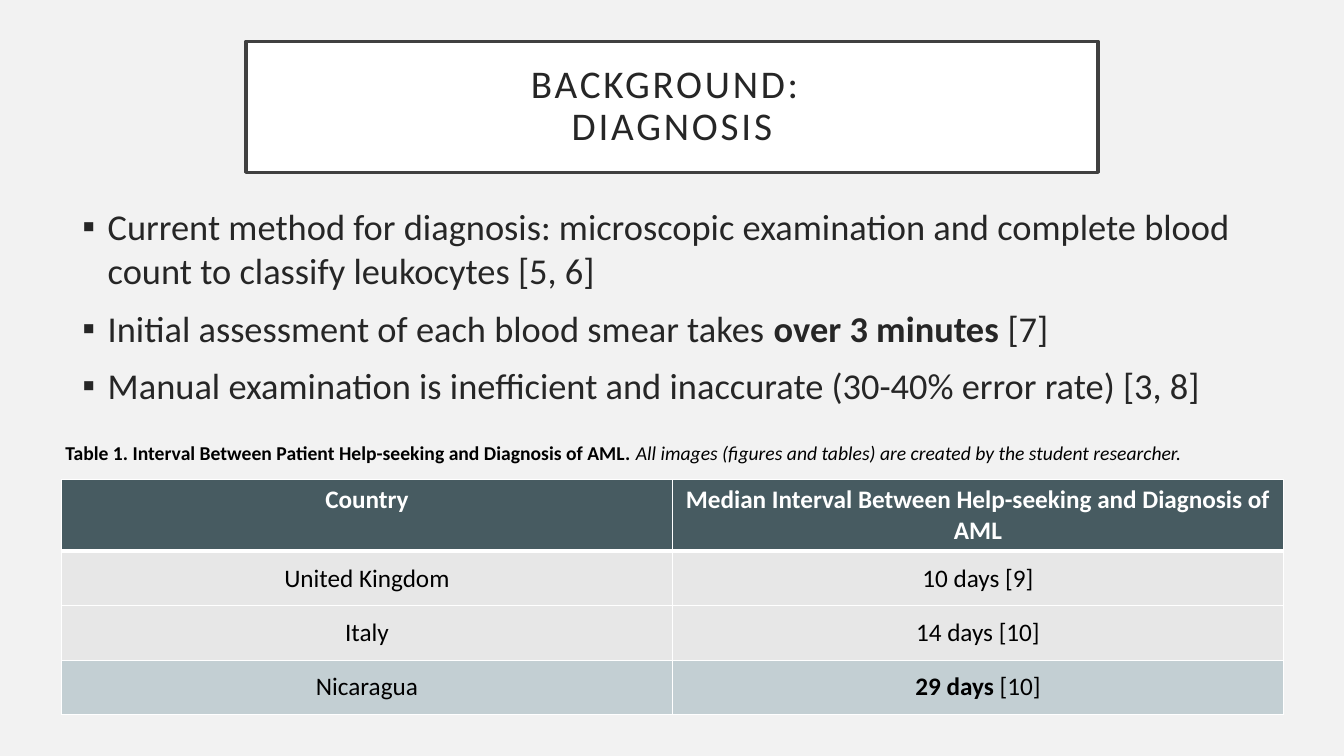
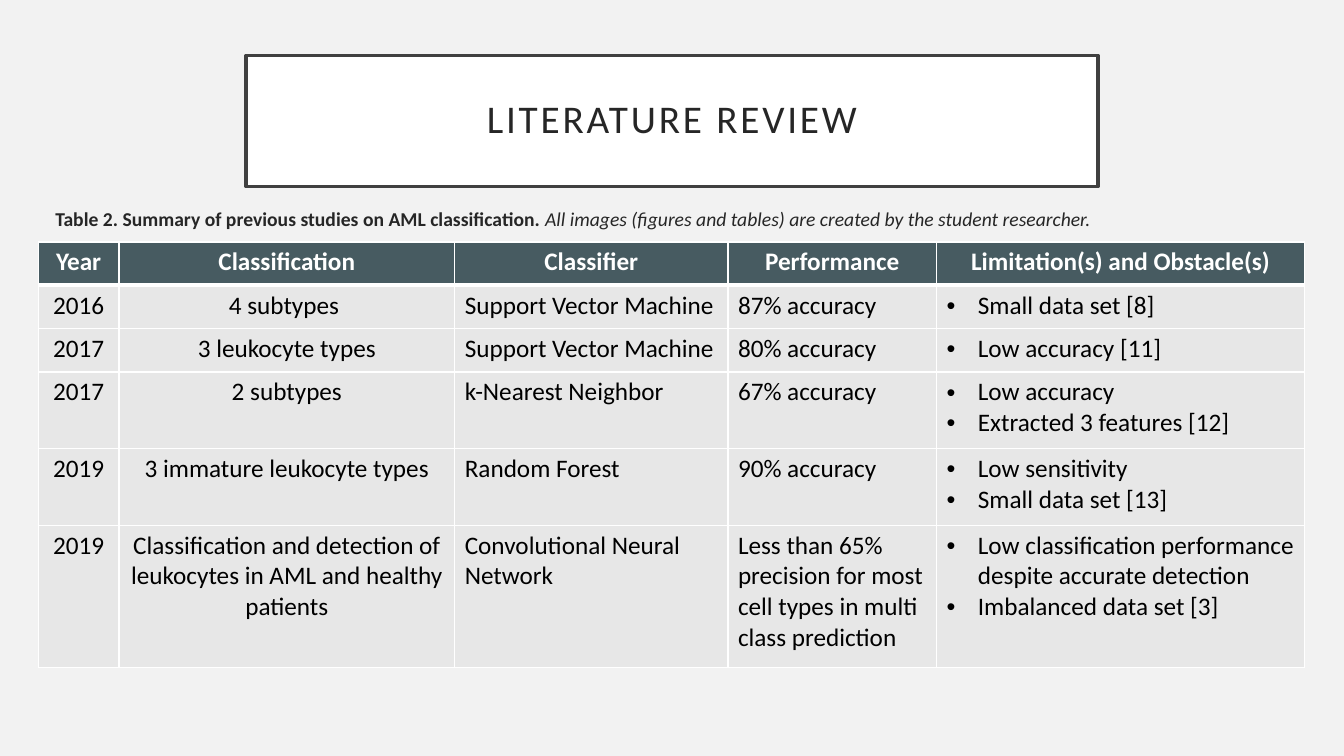
from dataclasses import dataclass

from lxml import etree
from pptx import Presentation
from pptx.dml.color import RGBColor
from pptx.enum.text import MSO_ANCHOR, MSO_AUTO_SIZE, PP_ALIGN
from pptx.oxml.ns import qn
from pptx.util import Inches, Pt

LEFT, CENTER = PP_ALIGN.LEFT, PP_ALIGN.CENTER
TOP, MIDDLE = MSO_ANCHOR.TOP, MSO_ANCHOR.MIDDLE
NO_AUTOFIT = MSO_AUTO_SIZE.NONE
TITLE_ONLY = 5


@dataclass(frozen=True)
class Theme:
    font: str = "Calibri"
    background: str = "F2F2F2"
    white: str = "FFFFFF"
    black: str = "000000"
    ink: str = "262626"
    frame: str = "404040"
    header: str = "475B61"
    row: str = "E7E7E7"
    highlight: str = "C3CFD3"
    title_size: int = 28
    body_size: int = 26
    table_size: int = 18
    caption_size: int = 14


@dataclass(frozen=True)
class Run:
    text: str
    bold: bool = False
    italic: bool = False


@dataclass(frozen=True)
class Column:
    width: float
    align: PP_ALIGN = CENTER
    bullet: str = ""


@dataclass(frozen=True)
class Box:
    left: float
    top: float
    width: float
    height: float

    def emu(self):
        return [Inches(v) for v in (self.left, self.top, self.width, self.height)]


THEME = Theme()
CREDIT = Run("All images (figures and tables) are created by the student researcher.", italic=True)

DIAGNOSIS_POINTS = [
    [Run("Current method for diagnosis: microscopic examination and complete blood "
         "count to classify leukocytes [5, 6]")],
    [Run("Initial assessment of each blood smear takes "), Run("over 3 minutes ", bold=True), Run("[7]")],
    [Run("Manual examination is inefficient and inaccurate (30-40% error rate) [3, 8]")],
]
INTERVAL_COLUMNS = [Column(6.06), Column(6.06)]
INTERVAL_ROWS = [
    ["Country", "Median Interval Between Help-seeking and Diagnosis of AML"],
    ["United Kingdom", "10 days [9]"],
    ["Italy", "14 days [10]"],
    ["Nicaragua", [[Run("29 days", bold=True), Run(" [10]")]]],
]
STUDY_COLUMNS = [
    Column(0.8), Column(3.33), Column(2.71, LEFT), Column(2.07, LEFT), Column(3.65, LEFT, "•"),
]
STUDY_ROWS = [
    ["Year", "Classification", "Classifier", "Performance", "Limitation(s) and Obstacle(s)"],
    ["2016", "4 subtypes ", "Support Vector Machine", "87% accuracy", "Small data set [8]"],
    ["2017", "3 leukocyte types", "Support Vector Machine", "80% accuracy", "Low accuracy [11]"],
    ["2017", "2 subtypes", "k-Nearest Neighbor", "67% accuracy",
     "Low accuracy\nExtracted 3 features [12]"],
    ["2019", "3 immature leukocyte types", "Random Forest", "90% accuracy",
     "Low sensitivity\nSmall data set [13]"],
    ["2019", "Classification and detection of leukocytes in AML and healthy patients",
     "Convolutional Neural Network",
     "Less than 65% precision for most cell types in multi class prediction",
     "Low classification performance despite accurate detection\nImbalanced data set [3]"],
]


def rgb(color: str) -> RGBColor:
    return RGBColor.from_string(color)


def format_run(r, *, size: int, color: str, bold: bool = False, italic: bool = False, spacing: int = 0):
    f = r.font
    f.name, f.size, f.bold, f.italic = THEME.font, Pt(size), bold, italic
    f.color.rgb = rgb(color)
    if spacing:
        r._r.get_or_add_rPr().set("spc", str(spacing * 100))


def indent(p, margin: float, first: float, bullet: str):
    pPr = p._p.get_or_add_pPr()
    pPr.set("marL", str(Inches(margin)))
    pPr.set("indent", str(Inches(first)))
    if bullet:
        etree.SubElement(pPr, qn("a:buFont")).set("typeface", "Arial")
        etree.SubElement(pPr, qn("a:buChar")).set("char", bullet)


def write(tf, paragraphs, *, size: int, color: str, align=LEFT, bold: bool = False,
          before: float = 0, margin: float = 0, first: float = 0, bullet: str = ""):
    if isinstance(paragraphs, str):
        paragraphs = [[Run(line)] for line in paragraphs.split("\n")]
    tf.word_wrap = True
    for i, runs in enumerate(paragraphs):
        p = tf.add_paragraph() if i else tf.paragraphs[0]
        p.alignment = align
        p.space_before = Pt(before)
        indent(p, margin, first, bullet)
        for run in runs:
            r = p.add_run()
            r.text = run.text
            format_run(r, size=size, color=color, bold=bold or run.bold, italic=run.italic)


def add_title(s, lines: list[str], top: float):
    sp = s.shapes.title
    sp.left, sp.top, sp.width, sp.height = Box(2.44, top, 8.45, 1.3).emu()
    sp.fill.solid()
    sp.fill.fore_color.rgb = rgb(THEME.white)
    sp.line.color.rgb = rgb(THEME.frame)
    sp.line.width = Pt(2.5)
    tf = sp.text_frame
    tf.auto_size, tf.word_wrap, tf.vertical_anchor = NO_AUTOFIT, True, MIDDLE
    tf.margin_left = tf.margin_top = tf.margin_right = tf.margin_bottom = Inches(0.2)
    p = tf.paragraphs[0]
    p.alignment, p.line_spacing = CENTER, 0.9
    for i, line in enumerate(lines):
        if i:
            p.add_line_break()
        r = p.add_run()
        r.text = line
        format_run(r, size=THEME.title_size, color=THEME.ink, spacing=2)


def add_text(s, box: Box, paragraphs, **fmt):
    sp = s.shapes.add_textbox(*box.emu())
    write(sp.text_frame, paragraphs, **fmt)


def add_caption(s, box: Box, heading: str, color: str):
    add_text(s, box, [[Run(heading, bold=True), CREDIT]],
             size=THEME.caption_size, color=color, margin=0.22)


def set_borders(cell, widths: dict[str, float]):
    tcPr = cell._tc.get_or_add_tcPr()
    for i, (side, width) in enumerate(widths.items()):
        ln = etree.Element(qn(f"a:ln{side}"), w=str(Pt(width)))
        fill = etree.SubElement(ln, qn("a:solidFill"))
        etree.SubElement(fill, qn("a:srgbClr")).set("val", THEME.white)
        tcPr.insert(i, ln)


def add_table(s, left: float, top: float, columns: list[Column], heights: list[float],
              rows: list[list], *, anchor=TOP, highlight: int = -1):
    box = Box(left, top, sum(c.width for c in columns), sum(heights))
    table = s.shapes.add_table(len(rows), len(columns), *box.emu()).table
    for col, column in zip(table.columns, columns):
        col.width = Inches(column.width)
    for i, (row, height) in enumerate(zip(rows, heights)):
        table.rows[i].height = Inches(height)
        header = i == 0
        fill = THEME.header if header else THEME.highlight if i == highlight else THEME.row
        for j, (content, column) in enumerate(zip(row, columns)):
            cell = table.cell(i, j)
            cell.vertical_anchor = TOP if header else anchor
            cell.fill.solid()
            cell.fill.fore_color.rgb = rgb(fill)
            set_borders(cell, {"L": 1, "R": 1, "T": 3 if i == 1 else 1, "B": 3 if header else 1})
            bullet = "" if header else column.bullet
            hang = 0.31 if bullet else 0
            write(cell.text_frame, content, size=THEME.table_size,
                  color=THEME.white if header else THEME.black, bold=header,
                  align=CENTER if header else column.align,
                  margin=hang, first=-hang, bullet=bullet)


def build_diagnosis(prs):
    s = prs.slides.add_slide(prs.slide_layouts[TITLE_ONLY])
    add_title(s, ["BACKGROUND: ", "DIAGNOSIS"], 0.41)
    add_text(s, Box(0.47, 1.98, 12.4, 4.25), DIAGNOSIS_POINTS, size=THEME.body_size,
             color=THEME.ink, before=10, margin=0.5, first=-0.25, bullet="▪")
    add_table(s, 0.61, 4.76, INTERVAL_COLUMNS, [0.71] + [0.54] * 3, INTERVAL_ROWS,
              anchor=MIDDLE, highlight=3)
    add_caption(s, Box(0.33, 4.33, 12.4, 0.34),
                "Table 1. Interval Between Patient Help-seeking and Diagnosis of AML. ", THEME.black)


def build_review(prs):
    s = prs.slides.add_slide(prs.slide_layouts[TITLE_ONLY])
    add_title(s, ["LITERATURE REVIEW"], 0.55)
    add_table(s, 0.38, 2.4, STUDY_COLUMNS, [0.43] * 3 + [0.76] * 2 + [1.41], STUDY_ROWS)
    add_caption(s, Box(0.23, 2, 11.85, 0.81),
                "Table 2. Summary of previous studies on AML classification. ", THEME.ink)


def main():
    prs = Presentation()
    prs.slide_width, prs.slide_height = Inches(13.33), Inches(7.5)
    fill = prs.slide_master.background.fill
    fill.solid()
    fill.fore_color.rgb = rgb(THEME.background)
    build_diagnosis(prs)
    build_review(prs)
    prs.save("out.pptx")


if __name__ == "__main__":
    main()
